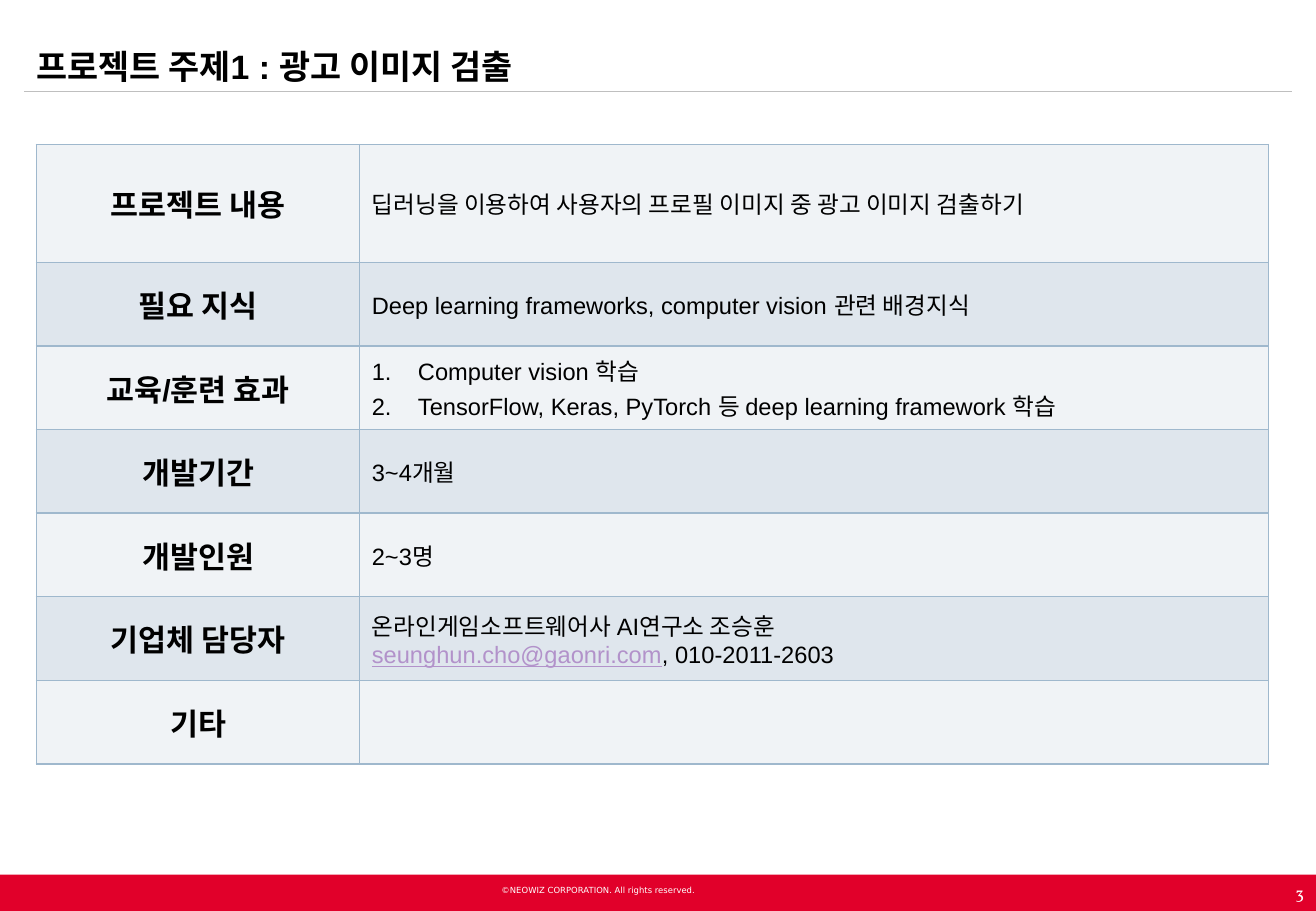
from dataclasses import dataclass

from lxml import etree
from pptx import Presentation
from pptx import util as u
from pptx.dml.color import RGBColor
from pptx.enum import shapes, text
from pptx.oxml.ns import qn

Inches, Pt = u.Inches, u.Pt
ALIGN, ANCHOR = text.PP_ALIGN, text.MSO_ANCHOR


@dataclass(frozen=True)
class Theme:
    black: str = "000000"
    white: str = "FFFFFF"
    red: str = "E1002A"
    rule: str = "BFBFBF"
    border: str = "9FB8CD"
    bands: tuple = ("F0F3F6", "DFE6ED")
    link: str = "B292CA"
    font: str = "Arial"
    footer_font: str = "DejaVu Sans"
    number_font: str = "Vollkorn"
    title: float = 20
    label: float = 18
    body: float = 14
    number: float = 10
    copyright: float = 5


T = Theme()
SLIDE_W, SLIDE_H = 10.83, 7.5
EMAIL = "seunghun.cho@gaonri.com"

# Each row: label, then the paragraphs of the description
ROWS = [
    ("프로젝트 내용", ["딥러닝을 이용하여 사용자의 프로필 이미지 중 광고 이미지 검출하기"]),
    ("필요 지식", ["Deep learning frameworks, computer vision 관련 배경지식"]),
    ("교육/훈련 효과", ["Computer vision 학습",
                  "TensorFlow, Keras, PyTorch 등 deep learning framework 학습"]),
    ("개발기간", ["3~4개월"]),
    ("개발인원", ["2~3명"]),
    ("기업체 담당자", ["온라인게임소프트웨어사 AI연구소 조승훈\v" + EMAIL + ", 010-2011-2603"]),
    ("기타", []),
]


def style(r, size, color=T.black, font=T.font, bold=False):
    r.font.size, r.font.name, r.font.bold = Pt(size), font, bold
    r.font.color.rgb = RGBColor.from_string(color)


def add_text(s, box, words, align, anchor, wrap=True, **look):
    tf = s.shapes.add_textbox(*map(Inches, box)).text_frame
    tf.word_wrap, tf.vertical_anchor = wrap, anchor
    tf.text = words
    p = tf.paragraphs[0]
    p.alignment = align
    style(p.runs[0], **look)


def number_paragraph(p):
    pPr = p._p.get_or_add_pPr()
    indent = Inches(0.38)
    pPr.set("marL", str(indent))
    pPr.set("indent", str(-indent))
    etree.SubElement(pPr, qn("a:buFont"), typeface="+mj-lt")
    etree.SubElement(pPr, qn("a:buAutoNum"), type="arabicPeriod")


def set_borders(cell):
    tcPr = cell._tc.get_or_add_tcPr()
    for i, side in enumerate(("lnL", "lnR", "lnT", "lnB")):
        ln = etree.Element(qn("a:" + side), w=str(Pt(1)))
        fill = etree.SubElement(ln, qn("a:solidFill"))
        etree.SubElement(fill, qn("a:srgbClr"), val=T.border)
        tcPr.insert(i, ln)


def format_cell(cell, band):
    cell.vertical_anchor = ANCHOR.MIDDLE
    cell.fill.solid()
    cell.fill.fore_color.rgb = RGBColor.from_string(band)
    set_borders(cell)


def fill_label(cell, label):
    cell.text = label
    p = cell.text_frame.paragraphs[0]
    p.alignment = ALIGN.CENTER
    style(p.runs[0], T.label, bold=True)


def fill_description(cell, lines):
    tf = cell.text_frame
    for i, line in enumerate(lines):
        p = tf.paragraphs[0] if i == 0 else tf.add_paragraph()
        if len(lines) > 1:
            number_paragraph(p)
        before, mail, after = line.partition(EMAIL)
        head, brk, tail = before.partition("\v")
        for words in (head, brk, tail, mail, after):
            if words == "\v":
                p.add_line_break()
            elif words:
                r = p.add_run()
                r.text = words
                style(r, T.body, T.link if words == EMAIL else T.black)
                if words == EMAIL:
                    r.font.underline = True


def add_header(s, box):
    x, y, w, h = box
    add_text(s, (x, y, 9.35, h - 0.01), "프로젝트 주제1 : 광고 이미지 검출",
             ALIGN.LEFT, ANCHOR.MIDDLE, size=T.title, bold=True)
    # Rule under the title
    ends = map(Inches, (x, y + h, x + w, y + h))
    line = s.shapes.add_connector(shapes.MSO_CONNECTOR.STRAIGHT, *ends)
    line.line.color.rgb = RGBColor.from_string(T.rule)
    line.line.width = Pt(0.5)
    etree.SubElement(line._element.spPr, qn("a:effectLst"))


def add_project_table(s, box):
    x, y, w, h = box
    label_w, first_h = 2.66, 0.97
    row_h = (h - first_h) / (len(ROWS) - 1)
    table = s.shapes.add_table(len(ROWS), 2, *map(Inches, box)).table
    table.columns[0].width = Inches(label_w)
    table.columns[1].width = Inches(w - label_w)
    for i, (label, lines) in enumerate(ROWS):
        table.rows[i].height = Inches(row_h if i else first_h)
        for cell in table.rows[i].cells:
            format_cell(cell, T.bands[i % 2])
        fill_label(table.cell(i, 0), label)
        fill_description(table.cell(i, 1), lines)


def add_footer(s, box):
    x, y, w, h = box
    bar = s.shapes.add_shape(shapes.MSO_SHAPE.RECTANGLE, *map(Inches, box))
    bar.shadow.inherit = False
    bar.fill.solid()
    bar.fill.fore_color.rgb = RGBColor.from_string(T.red)
    bar.line.fill.background()
    # Copyright line and page number
    add_text(s, (x + 3.94, y + 0.04, 1.97, 0.15),
             "©NEOWIZ CORPORATION. All rights reserved.",
             ALIGN.CENTER, ANCHOR.TOP, wrap=False,
             size=T.copyright, color=T.white, font=T.footer_font)
    add_text(s, (x + w - 2.53, y, 2.53, h), "3", ALIGN.RIGHT, ANCHOR.MIDDLE,
             size=T.number, color=T.white, font=T.number_font)


def main():
    prs = Presentation()
    prs.slide_width, prs.slide_height = Inches(SLIDE_W), Inches(SLIDE_H)
    s = prs.slides.add_slide(prs.slide_layouts[6])
    add_footer(s, (0, SLIDE_H - 0.3, SLIDE_W, 0.3))
    add_header(s, (0.2, 0.35, SLIDE_W - 0.4, 0.4))
    add_project_table(s, (0.3, 1.19, 10.14, 5.1))
    prs.save("out.pptx")


if __name__ == "__main__":
    main()
